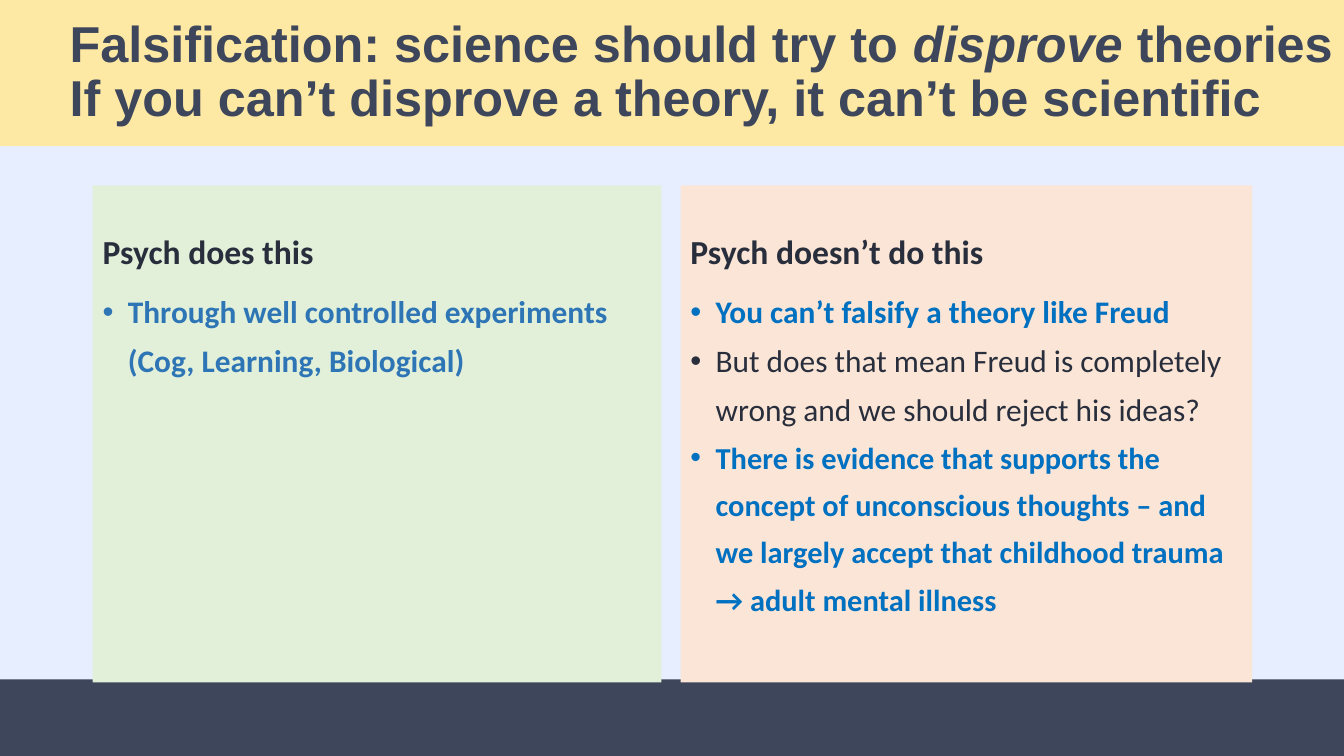
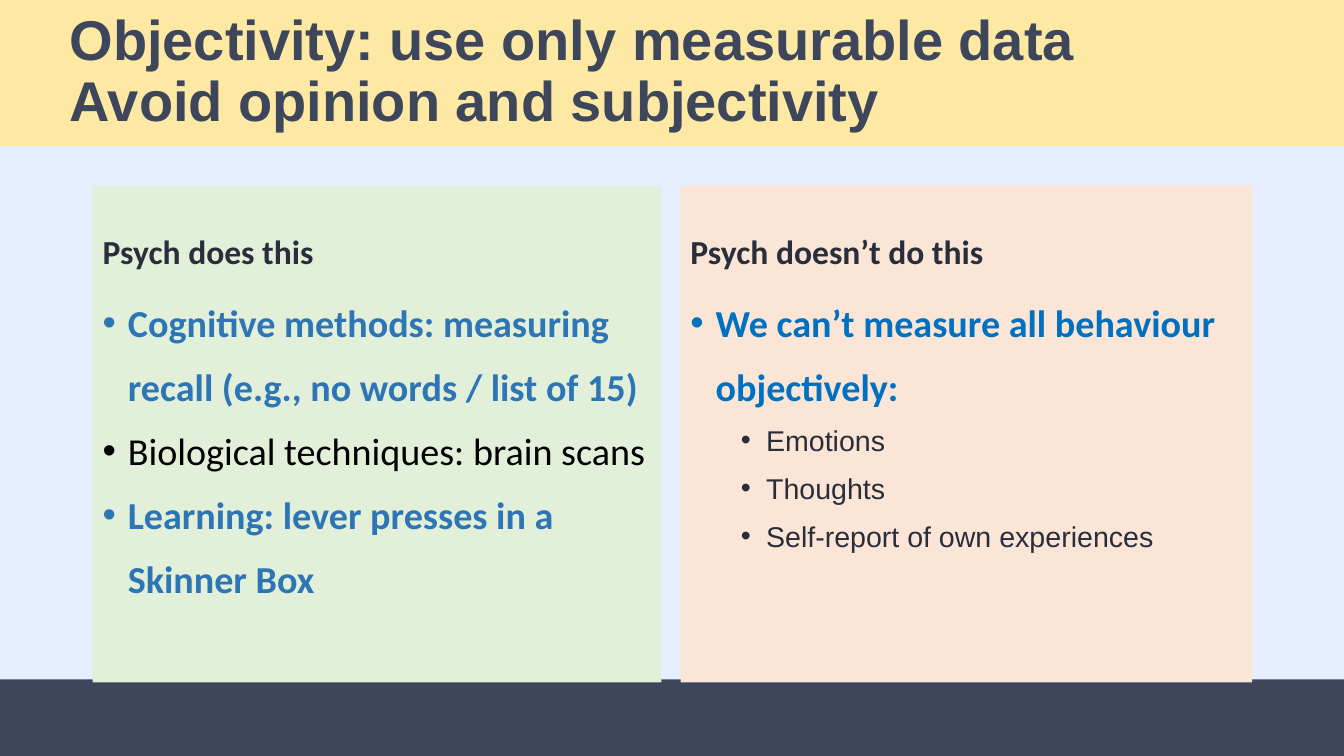
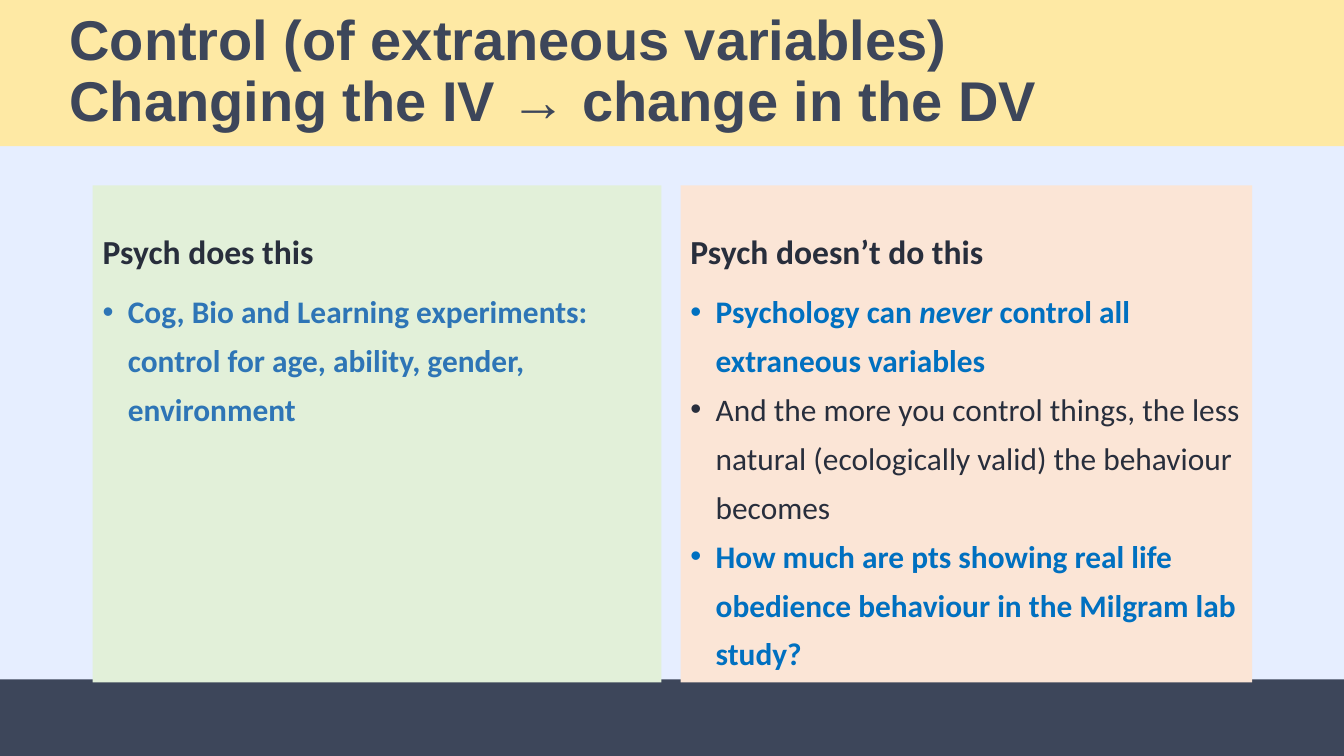
from lxml import etree
from pptx import Presentation
from pptx.dml.color import RGBColor
from pptx.enum import shapes, text
from pptx.oxml import ns
from pptx.util import Inches, Pt

# Colours
SKY = RGBColor(0xE6, 0xEE, 0xFF)
SLATE = RGBColor(0x3D, 0x46, 0x5A)
CREAM = RGBColor(0xFE, 0xE9, 0xA4)
GREEN = RGBColor(0xE2, 0xF0, 0xD9)
PEACH = RGBColor(0xFB, 0xE5, 0xD6)
INK = RGBColor(0x28, 0x2E, 0x3C)
BLACK = RGBColor(0, 0, 0)
BLUE = RGBColor(0x2E, 0x75, 0xB6)
AZURE = RGBColor(0x00, 0x70, 0xC0)

# Text styles
TITLE = {"name": "Arial", "bold": True}
HEAD = {"name": "Calibri", "bold": True}
PLAIN = {"name": "Calibri", "bold": False}
SUB = {"name": "Arial", "bold": False}

# Columns: left, width, fill, heading
COLS = [
    (0.92, 5.64, GREEN, "Psych does this"),
    (6.75, 5.67, PEACH, "Psych doesn’t do this"),
]

# Slides: title, its size, line spacing, then the bullets of each column
# as (text, style, size, colour); asterisks enclose italics
SLIDES = [
    ("Falsification: science should try to *disprove* theories\n"
     "If you can’t disprove a theory, it can’t be scientific", 36, 1.3, [
         [("Through well controlled experiments (Cog, Learning, Biological)",
           HEAD, 22.4, BLUE)],
         [("You can’t falsify a theory like Freud", HEAD, 22.4, AZURE),
          ("But does that mean Freud is completely wrong and we should "
           "reject his ideas?", PLAIN, 22.4, INK),
          ("There is evidence that supports the concept of unconscious "
           "thoughts – and we largely accept that childhood trauma "
           "→ adult mental illness", HEAD, 21.7, AZURE)],
     ]),
    ("Objectivity: use only measurable data\n"
     "Avoid opinion and subjectivity", 40, 1.4, [
         [("Cognitive methods: measuring recall (e.g., no words / list of 15)",
           HEAD, 27.2, BLUE),
          ("Biological techniques: brain scans", PLAIN, 27.2, BLACK),
          ("Learning: lever presses in a Skinner Box", HEAD, 27.2, BLUE)],
         [("We can’t measure all behaviour objectively:", HEAD, 27.2, AZURE),
          ("Emotions", SUB, 20.4, INK),
          ("Thoughts", SUB, 20.4, INK),
          ("Self-report of own experiences", SUB, 20.4, INK)],
     ]),
    ("Control (of extraneous variables)\n"
     "Changing the IV → change in the DV", 40, 1.3, [
         [("Cog, Bio and Learning experiments: control for age, ability, "
           "gender, environment", HEAD, 22.4, BLUE)],
         [("Psychology can *never* control all extraneous variables",
           HEAD, 22.4, AZURE),
          ("And the more you control things, the less natural (ecologically "
           "valid) the behaviour becomes", PLAIN, 22.4, INK),
          ("How much are pts showing real life obedience behaviour in the "
           "Milgram lab study?", HEAD, 22.4, AZURE)],
     ]),
]


def write(para, words, style, size, color, gap):
    """Write words into a paragraph, with line breaks and italics."""
    para.alignment = text.PP_ALIGN.LEFT
    para.line_spacing = gap
    para.space_before = Pt(0)
    for row, line in enumerate(words.split("\n")):
        if row:
            para.add_line_break()
        for part, piece in enumerate(line.split("*")):
            run = para.add_run()
            run.text = piece
            font = {**style, "size": Pt(size), "italic": part % 2 == 1}
            for key, val in font.items():
                setattr(run.font, key, val)
            run.font.color.rgb = color


def panel(shape, box, fill, anchor):
    """Place and fill a text shape, and return its text frame."""
    for key, val in zip(("left", "top", "width", "height"), box):
        setattr(shape, key, Inches(val))
    shape.fill.solid()
    shape.fill.fore_color.rgb = fill
    frame = shape.text_frame
    frame.word_wrap = True
    frame.auto_size = text.MSO_AUTO_SIZE.NONE
    frame.vertical_anchor = anchor
    return frame


prs = Presentation()
prs.slide_width, prs.slide_height = Inches(13.33), Inches(7.5)

# Shared background
back = prs.slide_master.background.fill
back.solid()
back.fore_color.rgb = SKY

for title, size, gap, lists in SLIDES:
    slide = prs.slides.add_slide(prs.slide_layouts[5])

    # Footer band
    band = slide.shapes.add_shape(
        shapes.MSO_SHAPE.RECTANGLE, 0, Inches(6.74), Inches(13.33), Inches(0.76))
    band.shadow.inherit = False
    band.fill.solid()
    band.fill.fore_color.rgb = SLATE
    band.line.fill.background()

    # Title band
    frame = panel(slide.shapes.title, (0, 0, 13.33, 1.45), CREAM,
                  text.MSO_ANCHOR.MIDDLE)
    frame.margin_left, frame.margin_right = Inches(0.69), 0
    write(frame.paragraphs[0], title, TITLE, size, SLATE, 0.9)

    # Two columns, each a heading above a list
    for (left, width, fill, head), items in zip(COLS, lists):
        frame = panel(slide.shapes.add_textbox(0, 0, 0, 0),
                      (left, 1.84, width, 0.9), fill, text.MSO_ANCHOR.BOTTOM)
        write(frame.paragraphs[0], head, HEAD, 24, INK, 1.5)

        frame = panel(slide.shapes.add_textbox(0, 0, 0, 0),
                      (left, 2.74, width, 4.03), fill, text.MSO_ANCHOR.TOP)
        for num, (words, style, pts, color) in enumerate(items):
            para = frame.add_paragraph() if num else frame.paragraphs[0]
            write(para, words, style, pts, color, gap)
            para.level = 1 if style is SUB else 0
            props = para._p.get_or_add_pPr()
            props.set("marL", str(Inches(0.25 + 0.5 * para.level)))
            props.set("indent", str(Inches(-0.25)))
            etree.SubElement(props, ns.qn("a:buFont"), typeface="Arial")
            etree.SubElement(props, ns.qn("a:buChar"), char="•")

prs.save("out.pptx")
